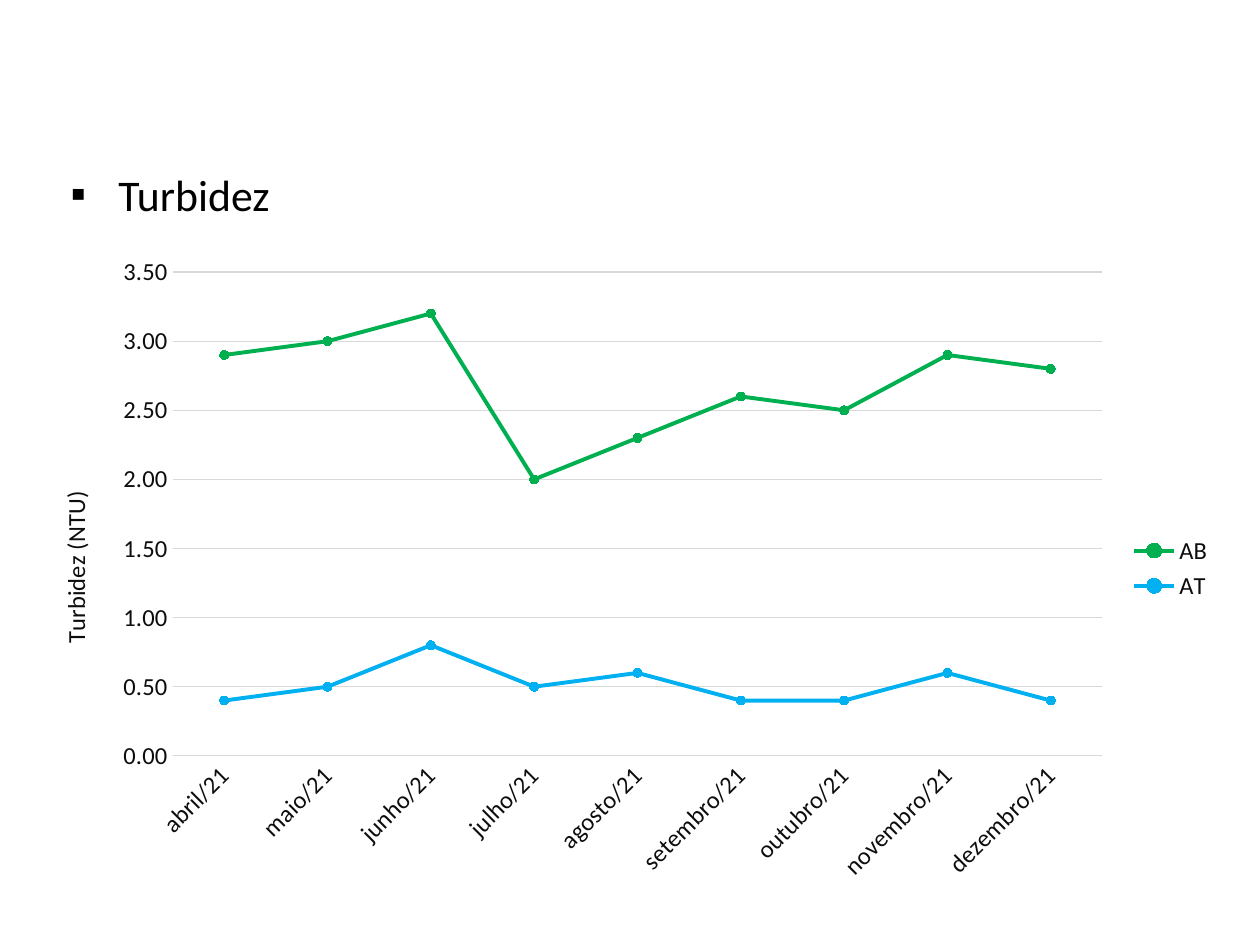
import pptx
import pptx.chart.data
import pptx.dml.color
import pptx.enum.chart
import pptx.enum.text
import pptx.oxml
import pptx.oxml.ns
import pptx.util
from pptx.util import Inches

FONT = "Calibri"
COLORS = {
    "heading": "000000",
    "text": "0D0D0D",
    "grid": "D9D9D9",
    "AB": "00B050",
    "AT": "00B0F0",
}
MONTHS = ["abril", "maio", "junho", "julho", "agosto",
          "setembro", "outubro", "novembro", "dezembro"]
TURBIDITY = {
    "AB": [2.9, 3, 3.2, 2, 2.3, 2.6, 2.5, 2.9, 2.8],
    "AT": [0.4, 0.5, 0.8, 0.5, 0.6, 0.4, 0.4, 0.6, 0.4],
}


def color(name):
    return pptx.dml.color.RGBColor.from_string(COLORS[name])


def style_font(font, size, color_name):
    font.name = FONT
    font.size = pptx.util.Pt(size)
    font.bold = False
    font.color.rgb = color(color_name)


def style_line(line, color_name, width):
    line.color.rgb = color(color_name)
    line.width = pptx.util.Pt(width)


def place_part(parent, position, fractions, target=None):
    parts = [f'<c:layoutTarget val="{target}"/>'] if target else []
    parts += [f'<c:{edge}Mode val="edge"/>' for edge in "xy"]
    parts += [f'<c:{key} val="{value}"/>' for key, value in zip("xywh", fractions)]
    namespace = pptx.oxml.ns.nsdecls("c")
    for old in parent.findall(pptx.oxml.ns.qn("c:layout")):
        parent.remove(old)
    parent.insert(position, pptx.oxml.parse_xml(
        f"<c:layout {namespace}><c:manualLayout>{''.join(parts)}"
        "</c:manualLayout></c:layout>"))


def add_heading(slide, left, top, width, height):
    body = slide.placeholders[1]
    body.left, body.top, body.width, body.height = left, top, width, height
    frame = body.text_frame
    frame.text = "Turbidez"
    frame.word_wrap = False
    frame.margin_right = 0
    frame.auto_size = pptx.enum.text.MSO_AUTO_SIZE.SHAPE_TO_FIT_TEXT
    paragraph = frame.paragraphs[0]
    paragraph.space_before = pptx.util.Pt(0)
    properties = paragraph._p.get_or_add_pPr()
    properties.set("marL", str(Inches(0.38)))
    properties.set("indent", str(-Inches(0.38)))
    namespace = pptx.oxml.ns.nsdecls("a")
    properties.append(pptx.oxml.parse_xml(f'<a:buFont {namespace} typeface="Arial"/>'))
    properties.append(pptx.oxml.parse_xml(f'<a:buChar {namespace} char="▪"/>'))
    style_font(paragraph.font, 25, "heading")


def format_axes(chart):
    category_axis, value_axis = chart.category_axis, chart.value_axis
    for axis in (category_axis, value_axis):
        axis.major_tick_mark = pptx.enum.chart.XL_TICK_MARK.NONE
        axis.minor_tick_mark = pptx.enum.chart.XL_TICK_MARK.NONE
        style_font(axis.tick_labels.font, 14, "text")
    style_line(category_axis.format.line, "grid", 0.75)
    category_axis._element.txPr.bodyPr.set("rot", "-2700000")

    value_axis.minimum_scale, value_axis.maximum_scale = 0, 3.5
    value_axis.major_unit = 0.5
    value_axis.tick_labels.number_format = "0.00"
    value_axis.tick_labels.number_format_is_linked = False
    value_axis.format.line.fill.background()
    style_line(value_axis.major_gridlines.format.line, "grid", 0.75)
    title = value_axis.axis_title
    title.text_frame.text = "Turbidez (NTU)"
    title.text_frame._txBody.bodyPr.set("rot", "-5400000")
    style_font(title.text_frame.paragraphs[0].font, 14, "text")


def format_series(series):
    series.smooth = False
    style_line(series.format.line, series.name, 2.25)
    marker = series.marker
    marker.style = pptx.enum.chart.XL_MARKER_STYLE.CIRCLE
    marker.size = 5
    marker.format.fill.solid()
    marker.format.fill.fore_color.rgb = color(series.name)
    style_line(marker.format.line, series.name, 0.75)


def add_turbidity_chart(slide, left, top, width, height):
    data = pptx.chart.data.CategoryChartData(number_format="0.00")
    data.categories = [f"{month}/21" for month in MONTHS]
    for name, values in TURBIDITY.items():
        data.add_series(name, values)
    chart = slide.shapes.add_chart(
        pptx.enum.chart.XL_CHART_TYPE.LINE_MARKERS,
        left, top, width, height, data).chart
    chart.has_title = False
    style_font(chart.font, 14, "text")
    chart.has_legend = True
    chart.legend.position = pptx.enum.chart.XL_LEGEND_POSITION.RIGHT
    chart.legend.include_in_layout = False
    style_font(chart.legend.font, 14, "text")
    plot = chart.plots[0]
    plot.vary_by_categories = False
    for series in plot.series:
        format_series(series)
    format_axes(chart)
    place_part(chart.value_axis.axis_title._element, 1,
               [Inches(0.17) / width, Inches(1.93) / height])
    place_part(chart._chartSpace.chart.plotArea, 0,
               [Inches(1.11) / width, Inches(0.23) / height,
                Inches(7.38) / width, Inches(3.84) / height], "inner")


def main():
    presentation = pptx.Presentation()
    presentation.slide_width = Inches(10)
    presentation.slide_height = Inches(7.5)
    slide = presentation.slides.add_slide(presentation.slide_layouts[1])
    title = slide.shapes.title._element
    title.getparent().remove(title)
    add_heading(slide, Inches(0.46), Inches(1.28), Inches(1.78), Inches(0.52))
    add_turbidity_chart(slide, Inches(0.26), Inches(1.93), Inches(9.47), Inches(5.16))
    presentation.save("out.pptx")


if __name__ == "__main__":
    main()
